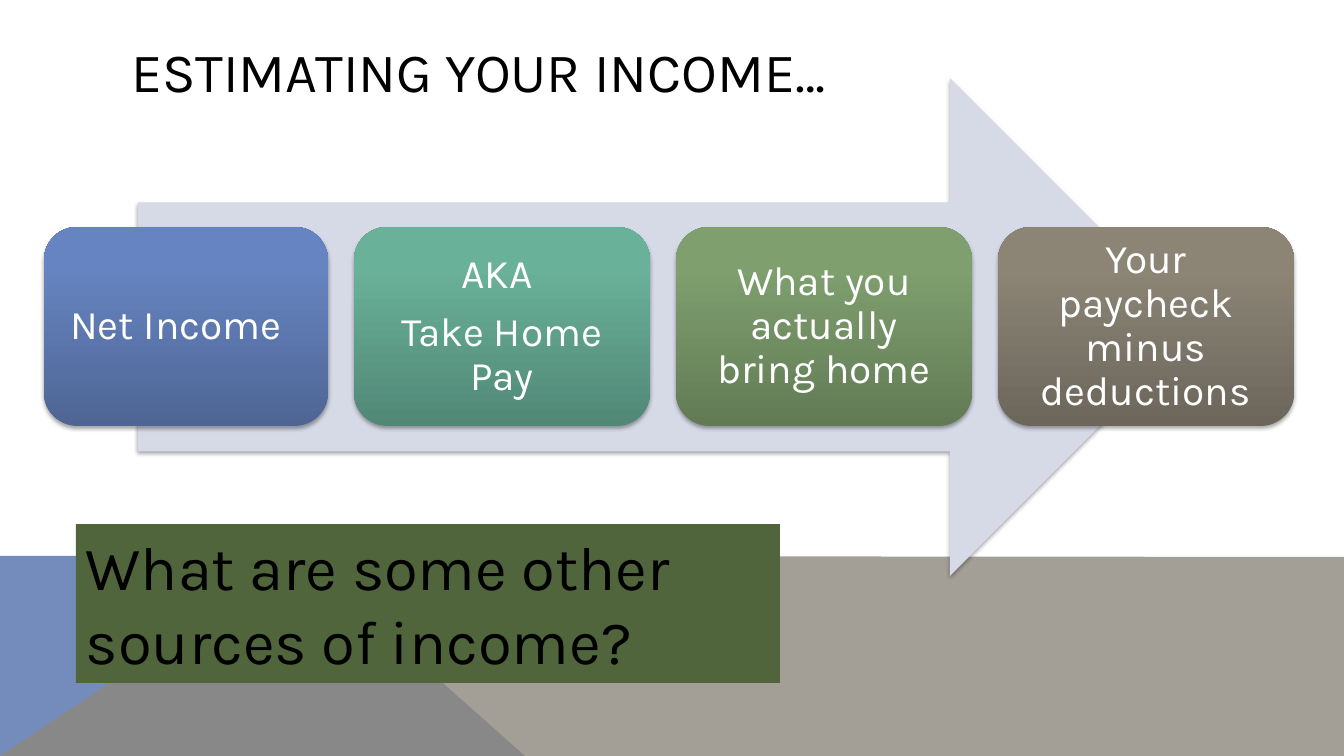
from dataclasses import dataclass

from lxml.etree import SubElement
from pptx import Presentation
from pptx.dml.color import RGBColor
from pptx.enum.shapes import MSO_SHAPE
from pptx.enum.text import MSO_ANCHOR, MSO_AUTO_SIZE, PP_ALIGN
from pptx.oxml import parse_xml
from pptx.oxml.ns import nsdecls, qn
from pptx.util import Pt

TITLE = "ESTIMATING YOUR INCOME…"
QUESTION = "What are some other sources of income?"
STEPS = [
    {"text": ["Net Income"], "width": 284, "extra_right": 20,
     "grad": ("4F6694", "6684C1", "6584C3")},
    {"text": ["AKA ", "Take Home Pay"], "width": 296, "extra_right": 0,
     "grad": ("518876", "6AB199", "69B39A")},
    {"text": ["What you actually bring home"], "width": 296, "extra_right": 0,
     "grad": ("627B55", "7F9F6F", "7FA16E")},
    {"text": ["Your paycheck minus deductions"], "width": 296, "extra_right": 0,
     "grad": ("6C665B", "8C8576", "8D8576")},
]
BANDS = [
    {"points": [(0, 756), (0, 556), (300, 556), (525, 756)],
     "color": "748CBC", "opacity": 100},
    {"points": [(0, 756), (300, 556), (1344, 557), (1344, 756)],
     "color": "8E887C", "opacity": 80},
]
TITLE_BOX = (121, 40, 1106, 61)
ARROW_BOX = (138, 78, 1061, 498)
QUESTION_BOX = (76, 524, 704, 159)
STEP_LEFT, STEP_TOP, STEP_HEIGHT, STEP_GAP, STEP_INSET = 44, 227, 199, 26, 12
GRAD_STOPS = (0, 80, 100)


@dataclass(frozen=True)
class Theme:
    font: str = "Karla"
    dark: str = "000000"
    light: str = "FFFFFF"
    arrow: str = "D6DAE7"
    question: str = "50653B"
    title_size: float = 39.6
    step_size: float = 29
    question_size: float = 44


THEME = Theme()
SCALE = 914400 / 100.8


def px(n):
    return round(n * SCALE)


def box(dims):
    return [px(n) for n in dims]


def apply(target, values):
    for name, value in values.items():
        setattr(target, name, value)


def write(tf, lines, size, color, frame, para):
    apply(tf, {"word_wrap": True, "auto_size": MSO_AUTO_SIZE.NONE, **frame})
    for i, line in enumerate(lines):
        p = tf.add_paragraph() if i else tf.paragraphs[0]
        apply(p, para)
        r = p.add_run()
        r.text = line
        apply(r.font, {"name": THEME.font, "size": Pt(size), "bold": False})
        r.font.color.rgb = RGBColor.from_string(color)


def paint(s, color):
    s.shadow.inherit = False
    s.line.fill.background()
    s.fill.solid()
    s.fill.fore_color.rgb = RGBColor.from_string(color)


def fade(s, opacity):
    color = s.fill._xPr.find(qn("a:solidFill"))[0]
    SubElement(color, qn("a:alpha"), val=str(opacity * 1000))


def add_shadow(s):
    effects = s._element.spPr.find(qn("a:effectLst"))
    effects.append(parse_xml(
        f'<a:outerShdw {nsdecls("a")} blurRad="{Pt(3.1)}" dist="{Pt(1.8)}" '
        'dir="5400000" rotWithShape="0"><a:srgbClr val="000000">'
        '<a:alpha val="35000"/></a:srgbClr></a:outerShdw>'))


def add_gradient(s, colors):
    stops = "".join(
        f'<a:gs pos="{pos * 1000}"><a:srgbClr val="{color}"/></a:gs>'
        for pos, color in zip(GRAD_STOPS, colors))
    solid = s._element.spPr.find(qn("a:solidFill"))
    solid.getparent().replace(solid, parse_xml(
        f'<a:gradFill {nsdecls("a")} rotWithShape="1"><a:gsLst>{stops}</a:gsLst>'
        '<a:lin ang="16200000" scaled="0"/></a:gradFill>'))


def add_bands(shapes):
    for band in BANDS:
        start, *rest = band["points"]
        builder = shapes.build_freeform(*start, scale=SCALE)
        builder.add_line_segments(rest, close=True)
        s = builder.convert_to_shape()
        paint(s, band["color"])
        if band["opacity"] < 100:
            fade(s, band["opacity"])


def add_title(title):
    apply(title, dict(zip(("left", "top", "width", "height"), box(TITLE_BOX))))
    write(title.text_frame, [TITLE], THEME.title_size, THEME.dark,
          {"vertical_anchor": MSO_ANCHOR.MIDDLE}, {"alignment": PP_ALIGN.LEFT})


def add_steps(shapes):
    arrow = shapes.add_shape(MSO_SHAPE.RIGHT_ARROW, *box(ARROW_BOX))
    paint(arrow, THEME.arrow)
    add_shadow(arrow)
    left = STEP_LEFT
    inset = px(STEP_INSET)
    for step in STEPS:
        s = shapes.add_shape(MSO_SHAPE.ROUNDED_RECTANGLE,
                             *box((left, STEP_TOP, step["width"], STEP_HEIGHT)))
        paint(s, step["grad"][0])
        add_gradient(s, step["grad"])
        add_shadow(s)
        write(s.text_frame, step["text"], THEME.step_size, THEME.light,
              {"vertical_anchor": MSO_ANCHOR.MIDDLE,
               "margin_left": inset, "margin_top": inset, "margin_bottom": inset,
               "margin_right": inset + px(step["extra_right"])},
              {"alignment": PP_ALIGN.CENTER, "line_spacing": 0.9,
               "space_after": Pt(10)})
        left += step["width"] + STEP_GAP


def add_question(shapes):
    s = shapes.add_shape(MSO_SHAPE.RECTANGLE, *box(QUESTION_BOX))
    paint(s, THEME.question)
    write(s.text_frame, [QUESTION], THEME.question_size, THEME.dark,
          {"vertical_anchor": MSO_ANCHOR.TOP}, {"alignment": PP_ALIGN.LEFT})


def main():
    prs = Presentation()
    apply(prs, {"slide_width": px(1344), "slide_height": px(756)})
    shapes = prs.slides.add_slide(prs.slide_layouts[5]).shapes
    add_bands(shapes)
    add_title(shapes.title)
    add_steps(shapes)
    add_question(shapes)
    prs.save("out.pptx")


if __name__ == "__main__":
    main()
